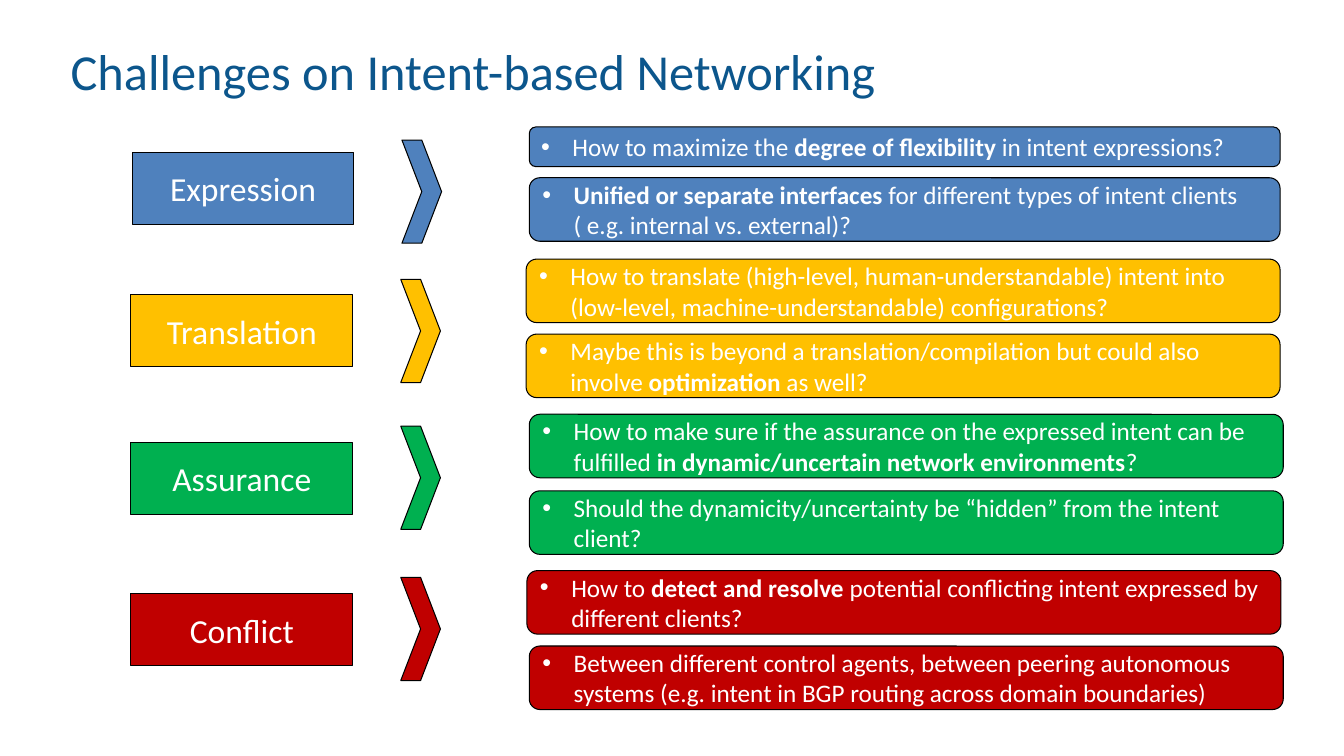
from pptx import Presentation
from pptx.dml.color import RGBColor
from pptx.enum.shapes import MSO_SHAPE as Preset
from pptx.enum.text import MSO_ANCHOR as Anchor, PP_ALIGN as Align
from pptx.oxml.ns import qn
from pptx.util import Cm, Pt
from lxml.etree import SubElement

TITLE = "Challenges on Intent-based Networking"
FONT = "Calibri"
BLUE, BLACK, WHITE = "0C568C", "000000", "FFFFFF"

CHALLENGES = [
    dict(label="Expression", color="4F81BD", left=3.33, top=3.84, chevron_top=3.53, questions=[
        (13.34, 3.2, 18.92, 1.0,
         [("How to maximize the ", False), ("degree of flexibility ", True),
          ("in intent expressions?", False)]),
        (13.34, 4.48, 18.92, 1.6,
         [("Unified or separate interfaces", True),
          (" for different types of intent clients ( e.g. internal vs. external)?", False)]),
    ]),
    dict(label="Translation", color="FFC000", left=3.3, top=7.43, chevron_top=7.04, questions=[
        (13.26, 6.53, 19.0, 1.6,
         [("How to translate (high-level, human-understandable) intent into "
           "(low-level, machine-understandable) configurations?", False)]),
        (13.26, 8.42, 19.0, 1.6,
         [("Maybe this is beyond a translation/compilation but could also involve ", False),
          ("optimization", True), (" as well?", False)]),
    ]),
    dict(label="Assurance", color="00B050", left=3.3, top=11.15, chevron_top=10.74, questions=[
        (13.34, 10.44, 19.0, 1.6,
         [("How to make sure if the assurance on the expressed intent can be fulfilled ", False),
          ("in dynamic/uncertain network environments", True), ("?", False)]),
        (13.34, 12.37, 19.0, 1.6,
         [("Should the dynamicity/uncertainty be “hidden” from the intent client?", False)]),
    ]),
    dict(label="Conflict", color="C00000", left=3.3, top=14.96, chevron_top=14.55, questions=[
        (13.28, 14.38, 19.0, 1.6,
         [("How to ", False), ("detect and resolve ", True),
          ("potential conflicting intent expressed by different clients?", False)]),
        (13.34, 16.28, 19.0, 1.6,
         [("Between different control agents, between peering autonomous systems "
           "(e.g. intent in BGP routing across domain boundaries)", False)]),
    ]),
]

LABEL_SIZE = (5.59, 1.81)
CHEVRON_SIZE = (1.0, 2.6)
CHEVRON_OFFSET = 6.8
BULLET_INDENT = Cm(0.79)


def rgb(code):
    return RGBColor.from_string(code)


def write(shape, runs, size, color=WHITE, align=Align.LEFT, bullet=False, spacing=None):
    frame = shape.text_frame
    frame.word_wrap = True
    frame.vertical_anchor = Anchor.MIDDLE
    paragraph = frame.paragraphs[0]
    paragraph.alignment = align
    if spacing:
        paragraph.line_spacing = Pt(spacing)
    if bullet:
        props = paragraph._p.get_or_add_pPr()
        props.set("marL", str(BULLET_INDENT))
        props.set("indent", str(-BULLET_INDENT))
        SubElement(props, qn("a:buFont"), typeface="Arial")
        SubElement(props, qn("a:buChar"), char="•")
    for text, bold in runs:
        run = paragraph.add_run()
        run.text = text
        run.font.name = FONT
        run.font.size = Pt(size)
        run.font.bold = bold
        run.font.color.rgb = rgb(color)


def add_block(slide, preset, left, top, width, height, color):
    block = slide.shapes.add_shape(preset, Cm(left), Cm(top), Cm(width), Cm(height))
    block.shadow.inherit = False
    block.fill.solid()
    block.fill.fore_color.rgb = rgb(color)
    block.line.color.rgb = rgb(BLACK)
    block.line.width = Pt(0.75)
    return block


def main():
    deck = Presentation()
    deck.slide_width, deck.slide_height = Cm(33.87), Cm(19.05)
    slide = deck.slides.add_slide(deck.slide_layouts[6])

    title = slide.shapes.add_textbox(Cm(1.53), Cm(0.33), Cm(24.8), Cm(3.2))
    write(title, [(TITLE, False)], 36, color=BLUE, spacing=35)

    for challenge in CHALLENGES:
        color, left = challenge["color"], challenge["left"]
        add_block(slide, Preset.CHEVRON, left + CHEVRON_OFFSET,
                  challenge["chevron_top"], *CHEVRON_SIZE, color)
        label = add_block(slide, Preset.RECTANGLE, left, challenge["top"], *LABEL_SIZE, color)
        write(label, [(challenge["label"], False)], 24, align=Align.CENTER)
        for *place, runs in challenge["questions"]:
            question = add_block(slide, Preset.ROUNDED_RECTANGLE, *place, color)
            write(question, runs, 18, bullet=True)

    deck.save("out.pptx")


if __name__ == "__main__":
    main()
